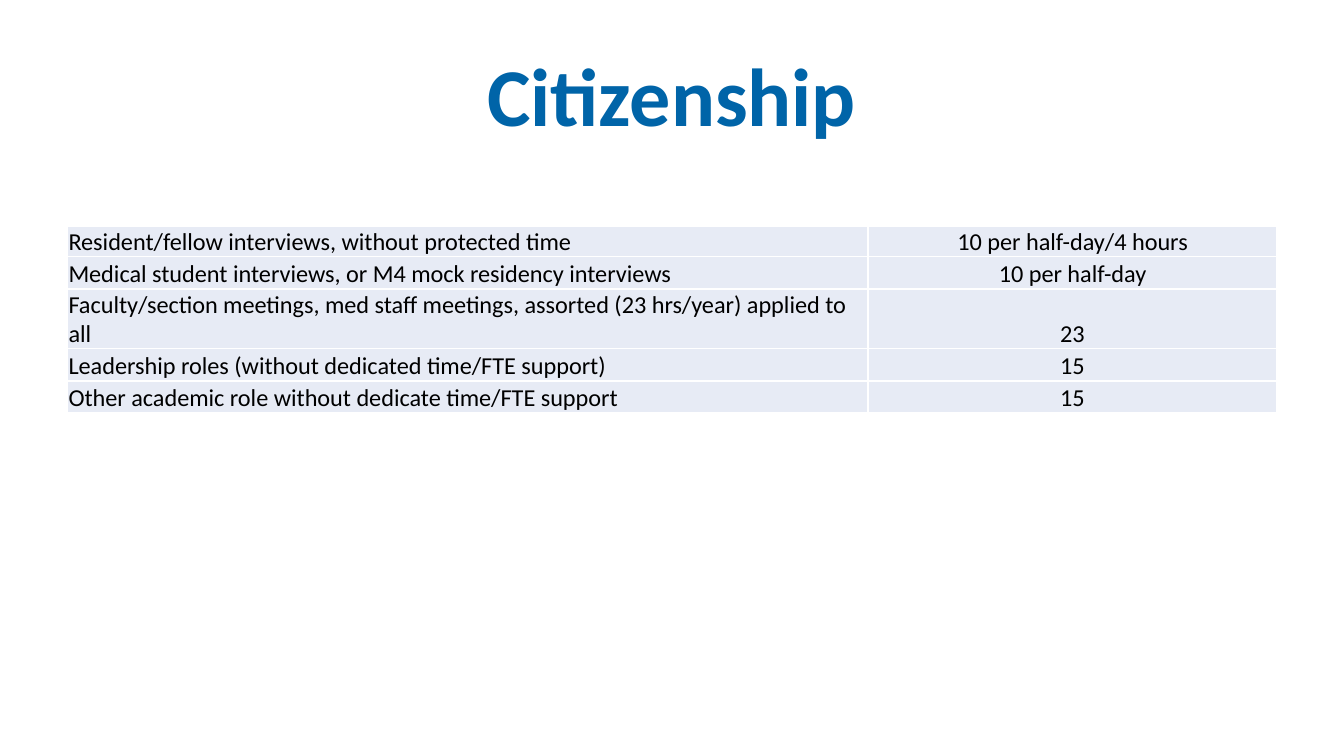
from lxml.etree import SubElement as Sub
from pptx import Presentation
from pptx.dml.color import RGBColor as RGB
from pptx.enum.text import MSO_ANCHOR as Anchor, PP_ALIGN as Align
from pptx.oxml.ns import qn
from pptx.util import Inches, Pt

HUES = {"title": "0064A8", "text": "000000", "cell": "E7EBF5", "edge": "FFFFFF"}
ROWS = [
    ("Resident/fellow interviews, without protected time", "10 per half-day/4 hours"),
    ("Medical student interviews, or M4 mock residency interviews", "10 per half-day"),
    ("Faculty/section meetings, med staff meetings, assorted (23 hrs/year) applied to all", "23"),
    ("Leadership roles (without dedicated time/FTE support)", "15"),
    ("Other academic role without dedicate time/FTE support", "15"),
]
HIGH = (0.23, 0.24, 0.44, 0.24, 0.24)


def style(par, size, hue, align, bold=False):
    par.alignment = align
    for run in par.runs:
        run.font.name = "Calibri"
        run.font.size = Pt(size)
        run.font.bold = bold
        run.font.color.rgb = RGB.from_string(HUES[hue])


def edge(cell):
    props = cell._tc.get_or_add_tcPr()
    for spot, side in enumerate(("lnL", "lnR", "lnT", "lnB")):
        line = Sub(props, qn("a:" + side), w=str(Pt(1)))
        fill = Sub(line, qn("a:solidFill"))
        Sub(fill, qn("a:srgbClr"), val=HUES["edge"])
        props.insert(spot, line)


prs = Presentation()
prs.slide_width = Inches(10)
prs.slide_height = Inches(10) * 9 // 16
slide = prs.slides.add_slide(prs.slide_layouts[6])

title = slide.shapes.add_textbox(Inches(0.5), Inches(0.23), Inches(9), Inches(0.94))
frame = title.text_frame
frame.word_wrap = True
frame.vertical_anchor = Anchor.MIDDLE
frame.text = "Citizenship"
style(frame.paragraphs[0], 44, "title", Align.CENTER, True)

grid = slide.shapes.add_table(
    len(ROWS), 2, Inches(0.5), Inches(1.68), Inches(9), Inches(1.38)
).table
grid.first_row = False
grid.horz_banding = False
for col, width in zip(grid.columns, (5.96, 3.04)):
    col.width = Inches(width)

for r, row in enumerate(ROWS):
    grid.rows[r].height = Inches(HIGH[r])
    for c, words in enumerate(row):
        cell = grid.cell(r, c)
        cell.text = words
        cell.vertical_anchor = Anchor.BOTTOM
        cell.margin_left = cell.margin_right = cell.margin_top = Inches(0.01)
        cell.margin_bottom = 0
        cell.fill.solid()
        cell.fill.fore_color.rgb = RGB.from_string(HUES["cell"])
        edge(cell)
        align = Align.CENTER if c else Align.LEFT
        style(cell.text_frame.paragraphs[0], 13, "text", align)

prs.save("out.pptx")
